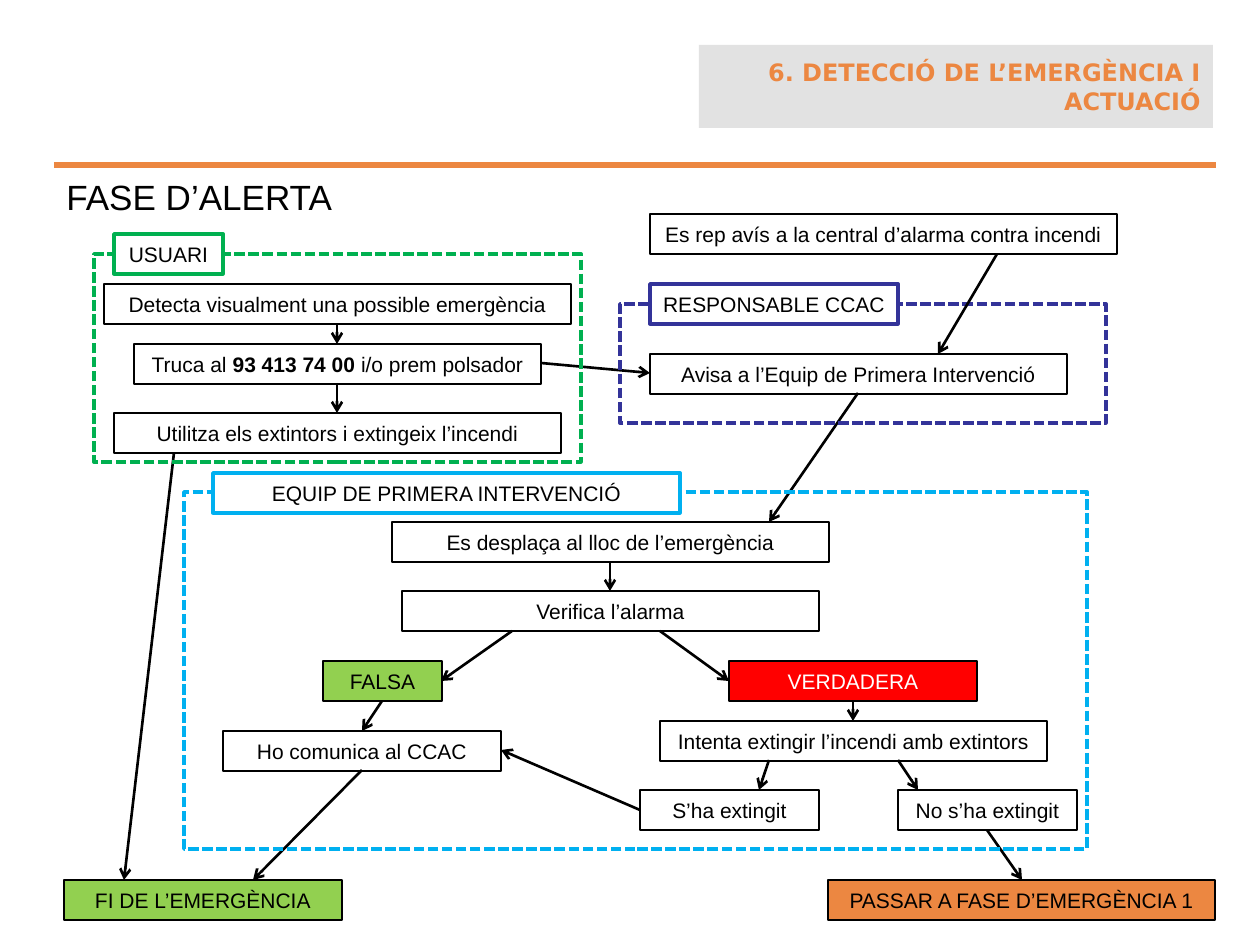
"""Build the alert phase flowchart slide of an emergency plan."""
import pptx
import pptx.dml.color
import pptx.enum.dml
import pptx.enum.shapes
import pptx.enum.text
import pptx.oxml
import pptx.oxml.ns
import pptx.util

PX = 914400 / 126
BOX_HEIGHT = 40
ALIGN = pptx.enum.text.PP_ALIGN
COLOURS = {
    "black": "000000", "white": "FFFFFF", "grey": "E2E2E2", "orange": "EC8741",
    "lime": "92D050", "red": "FF0000", "sky": "00B0F0", "green": "00B050", "indigo": "333399",
}
RGB = {name: pptx.dml.color.RGBColor.from_string(value) for name, value in COLOURS.items()}

deck = pptx.Presentation()
deck.slide_width, deck.slide_height = round(1260 * PX), round(945 * PX)
page = deck.slides.add_slide(deck.slide_layouts[6])


def add_box(left, top, width, height, wording="", fill=None, line=None, weight=0.75,
            colour="black", size=12, font="Arial", align=ALIGN.CENTER):
    box = page.shapes.add_shape(pptx.enum.shapes.MSO_SHAPE.RECTANGLE,
                                *(round(value * PX) for value in (left, top, width, height)))
    box.shadow.inherit = False
    if fill:
        box.fill.solid()
        box.fill.fore_color.rgb = RGB[fill]
    else:
        box.fill.background()
    if line:
        box.line.color.rgb = RGB[line]
        box.line.width = pptx.util.Pt(weight)
    else:
        box.line.fill.background()
    box.text_frame.word_wrap = height > BOX_HEIGHT
    box.text_frame.vertical_anchor = pptx.enum.text.MSO_ANCHOR.MIDDLE
    para = box.text_frame.paragraphs[0]
    para.alignment = align
    for index, part in enumerate(wording.split("*") if wording else []):
        span = para.add_run()
        span.text = part
        span.font.bold = index % 2 == 1
        span.font.size = pptx.util.Pt(size)
        span.font.name = font
        span.font.color.rgb = RGB[colour]
    return box


def add_line(start_x, start_y, end_x, end_y, colour="black", weight=1.5, arrow=True):
    link = page.shapes.add_connector(pptx.enum.shapes.MSO_CONNECTOR.STRAIGHT,
                                     *(round(value * PX) for value in (start_x, start_y, end_x, end_y)))
    link.line.color.rgb = RGB[colour]
    link.line.width = pptx.util.Pt(weight)
    if arrow:
        outline = link.line._get_or_add_ln()
        outline.append(pptx.oxml.parse_xml(f'<a:tailEnd {pptx.oxml.ns.nsdecls("a")} type="arrow"/>'))
    link._element.spPr.append(pptx.oxml.parse_xml(f'<a:effectLst {pptx.oxml.ns.nsdecls("a")}/>'))


add_line(54, 165, 1216, 165, "orange", 3, arrow=False)
add_box(699, 45, 514, 83, "*6. DETECCIÓ DE L’EMERGÈNCIA I ACTUACIÓ*", "grey",
        colour="orange", size=13.7, font="DejaVu Sans", align=ALIGN.RIGHT)

title = page.shapes.add_textbox(*(round(value * PX) for value in (54, 169, 1160, 55)))
title.text_frame.word_wrap = True
title.text_frame.text = "FASE D’ALERTA"
heading = title.text_frame.paragraphs[0]
heading.alignment = ALIGN.JUSTIFY
for span in heading.runs:
    span.font.size = pptx.util.Pt(20)
    span.font.name = "Arial"
    span.font.color.rgb = RGB["black"]

steps = [
    (104, 284, 467, "Detecta visualment una possible emergència", "white"),
    (134, 344, 407, "Truca al *93 413 74 00 *i/o prem polsador", "white"),
    (114, 413, 447, "Utilitza els extintors i extingeix l’incendi", "white"),
    (650, 214, 467, "Es rep avís a la central d’alarma contra incendi", "white"),
    (650, 354, 417, "Avisa a l’Equip de Primera Intervenció", "white"),
    (392, 522, 437, "Es desplaça al lloc de l’emergència", "white"),
    (402, 591, 417, "Verifica l’alarma", "white"),
    (323, 661, 119, "FALSA", "lime"),
    (729, 661, 248, "VERDADERA", "red"),
    (223, 731, 278, "Ho comunica al CCAC", "white"),
    (660, 721, 387, "Intenta extingir l’incendi amb extintors", "white"),
    (640, 790, 179, "S’ha extingit", "white"),
    (898, 790, 179, "No s’ha extingit", "white"),
    (64, 880, 278, "FI DE L’EMERGÈNCIA", "lime"),
    (828, 880, 387, "PASSAR A FASE D’EMERGÈNCIA 1", "orange"),
]
for left, top, width, wording, fill in steps:
    add_box(left, top, width, BOX_HEIGHT, wording, fill, "black",
            colour="white" if fill == "red" else "black")

arrows = [
    (337, 324, 337, 344), (337, 383, 337, 413), (541, 363, 650, 373),
    (858, 393, 769, 522), (610, 562, 610, 591), (512, 631, 441, 681),
    (660, 631, 729, 681), (853, 701, 853, 721), (174, 453, 124, 880),
    (769, 760, 759, 790), (898, 760, 918, 790), (382, 701, 362, 731),
    (362, 770, 253, 880), (640, 810, 501, 750), (987, 830, 1022, 880),
]
for ends in arrows:
    add_line(*ends)

teams = [
    ((184, 492, 903, 357), (213, 473, 467), "EQUIP DE PRIMERA INTERVENCIÓ", "sky"),
    ((94, 254, 487, 208), (114, 234, 109), "USUARI", "green"),
    ((620, 304, 486, 119), (650, 284, 248), "RESPONSABLE CCAC", "indigo"),
]
for frame, label, wording, colour in teams:
    border = add_box(*frame, line=colour, weight=2)
    border.line.dash_style = pptx.enum.dml.MSO_LINE.SQUARE_DOT
    add_box(*label, BOX_HEIGHT, wording, "white", colour, 2)

add_line(997, 254, 938, 354)

deck.save("out.pptx")
